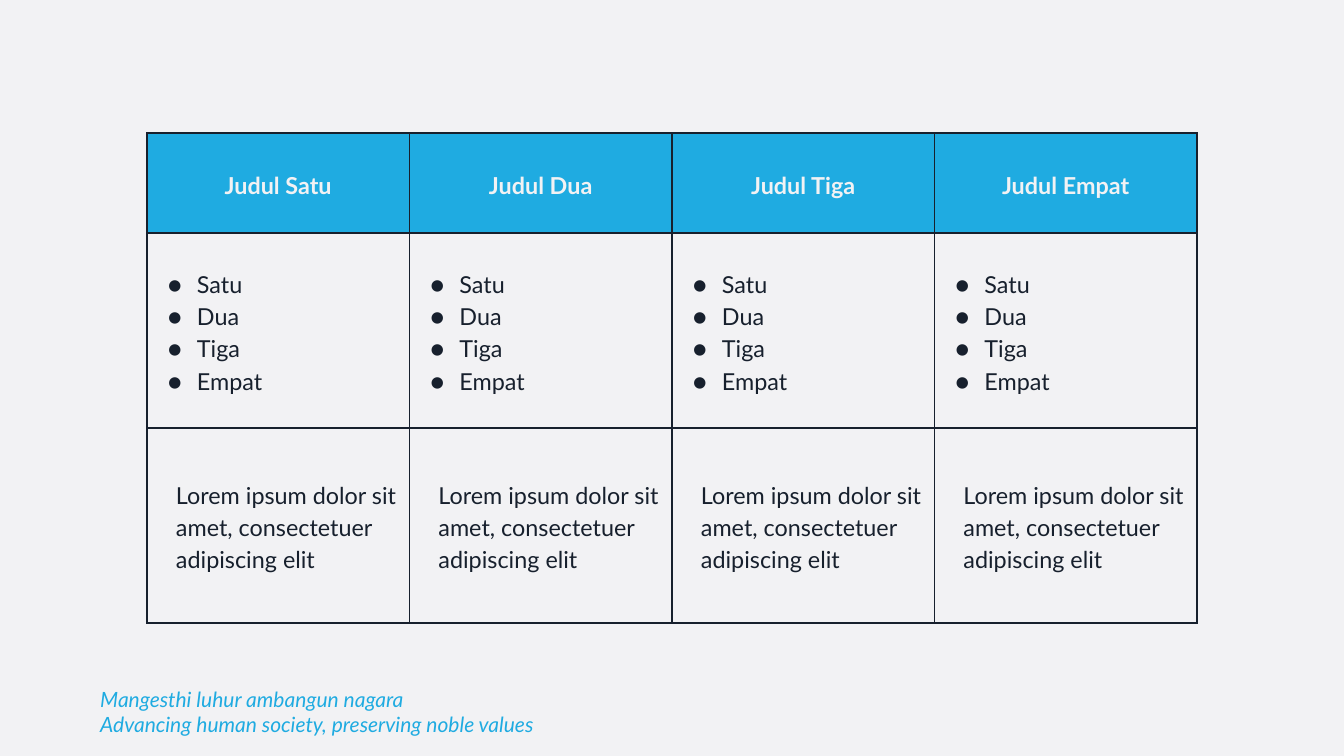
from pptx import Presentation
from pptx.dml.color import RGBColor
from pptx.enum.text import MSO_ANCHOR, MSO_AUTO_SIZE, PP_ALIGN
from pptx.oxml import parse_xml
from pptx.oxml.ns import nsdecls
from pptx.util import Pt

PX = 914400 / 84
BLUE = RGBColor(0x1F, 0xAB, 0xE1)
PALE = RGBColor(0xF2, 0xF2, 0xF4)
DARK = RGBColor(0x17, 0x20, 0x2D)


def px(num):
    return int(num * PX)


def write(frame, text, size=20, color=DARK, bold=False, italic=False,
          align=PP_ALIGN.LEFT, space=1.15, left=0, hang=0):
    for num, line in enumerate(text.split("\n")):
        para = frame.add_paragraph() if num else frame.paragraphs[0]
        para.alignment = align
        para.line_spacing = space
        props = para._p.get_or_add_pPr()
        props.set("marL", str(px(left)))
        props.set("indent", str(px(-hang)))
        if hang:
            for mark in (f'<a:buClr {nsdecls("a")}><a:srgbClr val="{color}"/></a:buClr>',
                         f'<a:buFont {nsdecls("a")} typeface="Lato"/>',
                         f'<a:buChar {nsdecls("a")} char="●"/>'):
                props.append(parse_xml(mark))
        run = para.add_run()
        run.text = line
        font = run.font
        font.name = "Lato"
        font.size = Pt(size)
        font.bold = bold
        font.italic = italic
        font.color.rgb = color


deck = Presentation()
deck.slide_width = px(1344)
deck.slide_height = px(756)
slide = deck.slides.add_slide(deck.slide_layouts[6])
slide.background.fill.solid()
slide.background.fill.fore_color.rgb = PALE

motto = slide.shapes.add_textbox(px(92), px(682), px(672), px(60)).text_frame
motto.word_wrap = True
motto.auto_size = MSO_AUTO_SIZE.SHAPE_TO_FIT_TEXT
write(motto, "Mangesthi luhur ambangun nagara\nAdvancing human society, preserving noble values",
      size=18, color=BLUE, italic=True, space=1.0)

heads = ["Judul Satu", "Judul Dua", "Judul Tiga", "Judul Empat"]
items = "Satu\nDua\nTiga\nEmpat"
blurb = "Lorem ipsum dolor sit amet, consectetuer adipiscing elit"
rows = [
    (100, heads, BLUE, dict(color=PALE, bold=True, align=PP_ALIGN.CENTER)),
    (195, [items] * 4, PALE, dict(left=42, hang=29)),
    (195, [blurb] * 4, PALE, dict(left=21)),
]
table = slide.shapes.add_table(3, 4, px(147), px(133), px(1050), px(490)).table
for col in table.columns:
    col.width = px(1050) // 4

for row, (high, texts, fill, style) in enumerate(rows):
    table.rows[row].height = px(high)
    for col, text in enumerate(texts):
        cell = table.cell(row, col)
        cell.vertical_anchor = MSO_ANCHOR.MIDDLE
        cell.margin_left = cell.margin_right = px(8)
        cell.margin_top = cell.margin_bottom = px(8)
        for side in "LRTB":
            cell._tc.get_or_add_tcPr().append(parse_xml(
                f'<a:ln{side} {nsdecls("a")} w="{Pt(1.5)}"><a:solidFill>'
                f'<a:srgbClr val="{DARK}"/></a:solidFill></a:ln{side}>'))
        cell.fill.solid()
        cell.fill.fore_color.rgb = fill
        write(cell.text_frame, text, **style)

deck.save("out.pptx")
